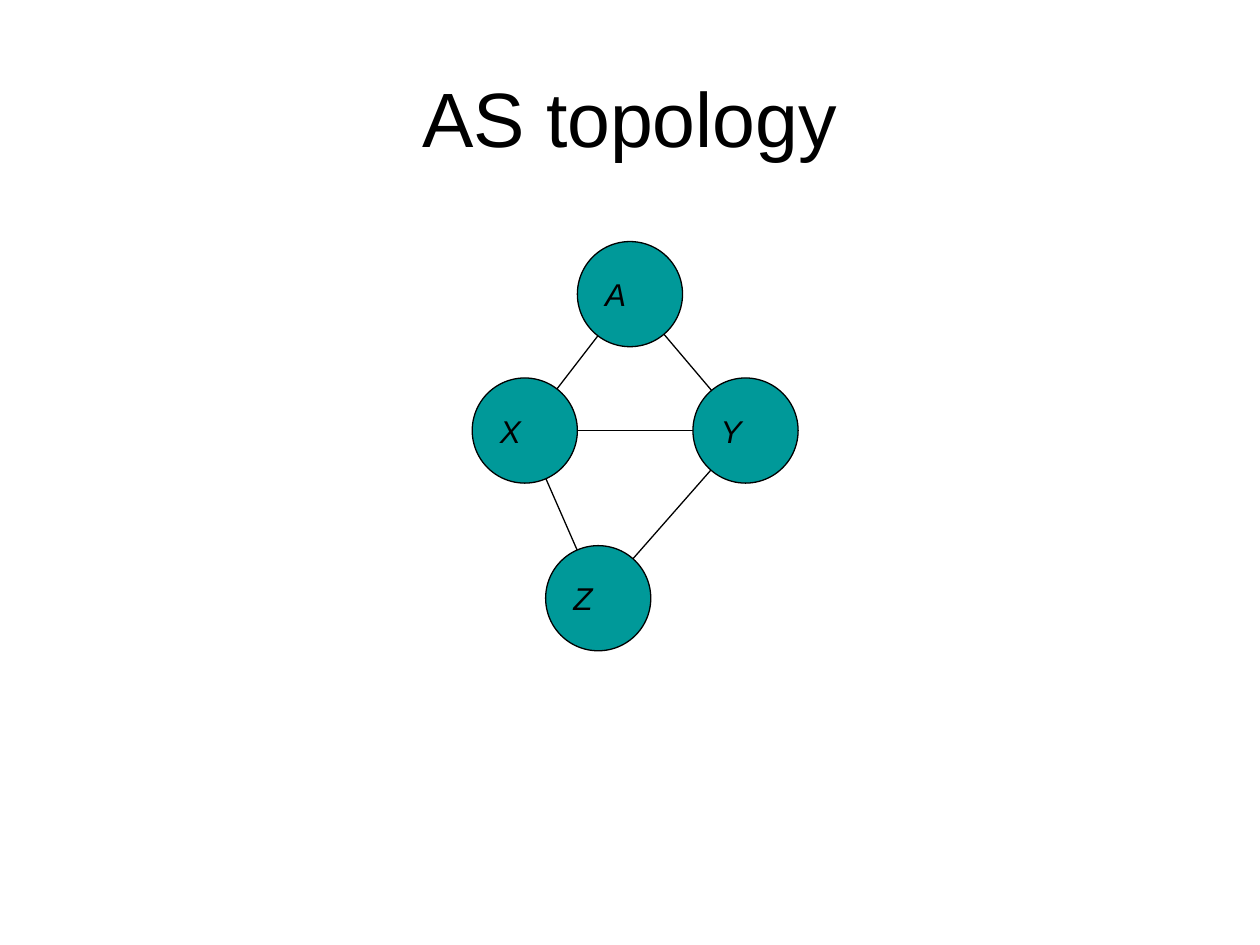
"""Build the AS topology slide: four systems joined by links."""
from dataclasses import dataclass

import pptx
import pptx.dml.color
import pptx.enum.shapes
import pptx.enum.text
import pptx.oxml.ns
import pptx.util
from lxml import etree
from pptx.util import Cm

COLOURS = {"node": "009999", "ink": "000000"}
FONT = "Arial"
DIAMETER = 2.12
LINE_WIDTH = pptx.util.Pt(0.75)


@dataclass(frozen=True)
class System:
    """An autonomous system, placed by its centre in centimetres."""

    label: str
    x: float
    y: float


SYSTEMS = {
    system.label: system
    for system in (
        System("Y", 15.03, 8.68),
        System("Z", 12.06, 12.06),
        System("X", 10.58, 8.68),
        System("A", 12.7, 5.93),
    )
}
LINKS = ("XA", "AY", "XY", "ZX", "ZY")


def colour(name: str) -> pptx.dml.color.RGBColor:
    """Look up a colour by its role."""
    return pptx.dml.color.RGBColor.from_string(COLOURS[name])


def write(frame, text: str, size: int, align, italic: bool = False) -> None:
    """Fill a text frame with one styled, vertically centred paragraph."""
    frame.text = text
    frame.vertical_anchor = pptx.enum.text.MSO_ANCHOR.MIDDLE
    paragraph = frame.paragraphs[0]
    paragraph.alignment = align
    font = paragraph.runs[0].font
    font.name = FONT
    font.size = pptx.util.Pt(size)
    font.italic = italic
    font.color.rgb = colour("ink")


def outline(line) -> None:
    """Apply the thin line shared by links and systems."""
    line.color.rgb = colour("ink")
    line.width = LINE_WIDTH


def draw_link(shapes, start: System, end: System) -> None:
    """Draw a straight link between the centres of two systems."""
    link = shapes.add_connector(
        pptx.enum.shapes.MSO_CONNECTOR.STRAIGHT,
        Cm(start.x), Cm(start.y), Cm(end.x), Cm(end.y),
    )
    outline(link.line)
    etree.SubElement(link._element.spPr, pptx.oxml.ns.qn("a:effectLst"))


def draw_system(shapes, system: System) -> None:
    """Draw a system as a labelled circle."""
    circle = shapes.add_shape(
        pptx.enum.shapes.MSO_SHAPE.OVAL,
        Cm(system.x - DIAMETER / 2), Cm(system.y - DIAMETER / 2),
        Cm(DIAMETER), Cm(DIAMETER),
    )
    circle.shadow.inherit = False
    circle.fill.solid()
    circle.fill.fore_color.rgb = colour("node")
    outline(circle.line)
    circle.text_frame.word_wrap = False
    write(circle.text_frame, system.label, 18, pptx.enum.text.PP_ALIGN.LEFT, italic=True)


def main() -> None:
    """Assemble and save the slide."""
    presentation = pptx.Presentation()
    presentation.slide_width = Cm(25.4)
    presentation.slide_height = Cm(19.05)
    shapes = presentation.slides.add_slide(presentation.slide_layouts[6]).shapes

    title = shapes.add_textbox(Cm(1.27), Cm(0.76), Cm(22.86), Cm(3.18))
    title.text_frame.word_wrap = True
    write(title.text_frame, "AS topology", 44, pptx.enum.text.PP_ALIGN.CENTER)

    for start, end in LINKS:
        draw_link(shapes, SYSTEMS[start], SYSTEMS[end])
    for system in SYSTEMS.values():
        draw_system(shapes, system)

    presentation.save("out.pptx")


if __name__ == "__main__":
    main()
